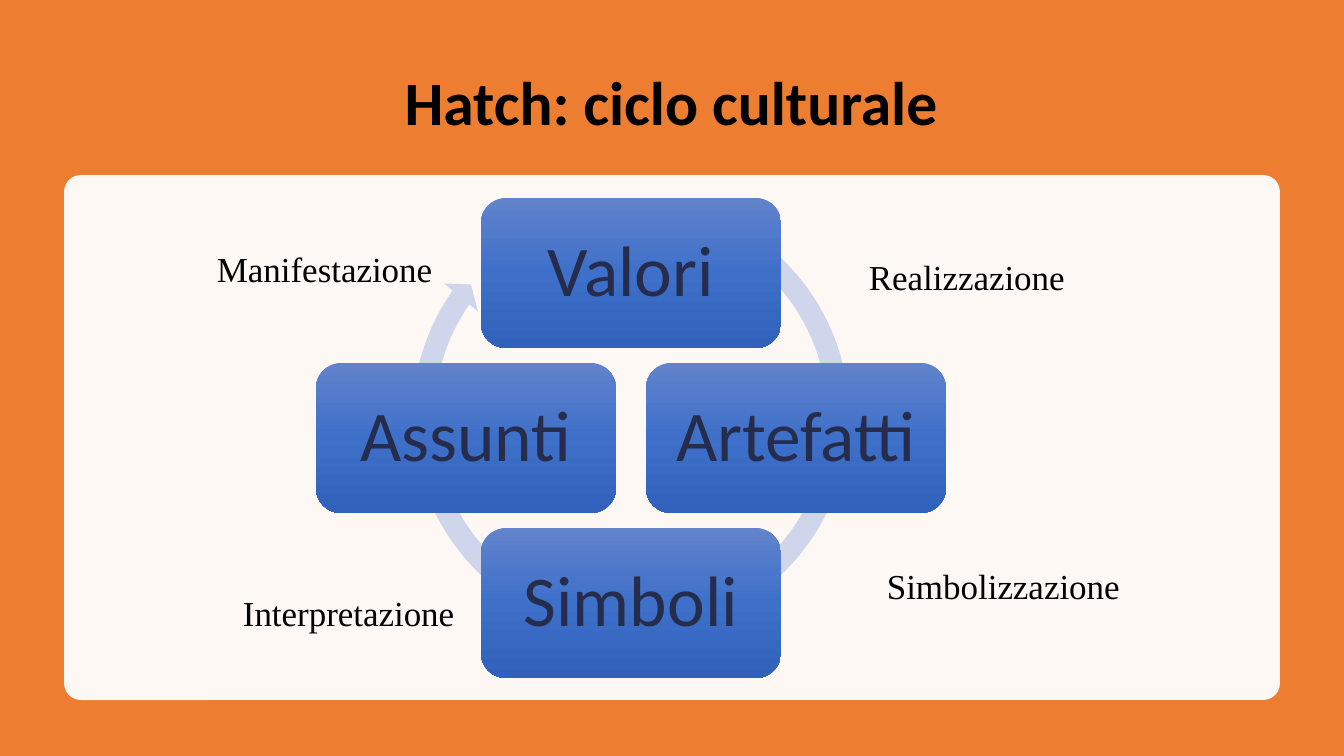
from copy import deepcopy

from lxml import etree
from pptx import Presentation
from pptx.dml.color import RGBColor
from pptx.enum.shapes import MSO_SHAPE
from pptx.enum.text import MSO_ANCHOR, MSO_AUTO_SIZE, PP_ALIGN
from pptx.oxml.ns import qn
from pptx.util import Pt

WIDE, HIGH = 1344, 756
SCALE = 12192000 / WIDE

RECT = MSO_SHAPE.RECTANGLE
ROUND = MSO_SHAPE.ROUNDED_RECTANGLE
ARROW = MSO_SHAPE.CIRCULAR_ARROW
MIDDLE, TOP = MSO_ANCHOR.MIDDLE, MSO_ANCHOR.TOP
CENTER, LEFT = PP_ALIGN.CENTER, PP_ALIGN.LEFT
GROW = MSO_AUTO_SIZE.SHAPE_TO_FIT_TEXT

ORANGE = RGBColor(0xED, 0x7D, 0x31)
WHITE = RGBColor(0xFF, 0xFF, 0xFF)
BLACK = RGBColor(0, 0, 0)
PALE = RGBColor(0xCF, 0xD5, 0xEA)
NAVY = RGBColor(0x26, 0x2D, 0x4C)
BLUES = [RGBColor(0x61, 0x83, 0xCB), RGBColor(0x3E, 0x70, 0xCA),
         RGBColor(0x30, 0x62, 0xBB)]

TITLE = {"name": "Calibri", "size": Pt(44), "bold": True}
NODE = {"name": "Calibri", "size": Pt(51)}
LABEL = {"name": "Times New Roman", "size": Pt(25)}

# Steps of the cycle: column and row, counted from its centre
STEPS = [("Valori", 0, -1), ("Artefatti", 1, 0),
         ("Simboli", 0, 1), ("Assunti", -1, 0)]
# Labels: text, then left, top, width inside the panel
LABELS = [("Realizzazione", 795, 76, 229), ("Simbolizzazione", 813, 385, 273),
          ("Interpretazione", 169, 412, 238), ("Manifestazione", 143, 68, 264)]


def px(num):
    return round(num * SCALE)


def add_form(slide, kind, box, color=None):
    form = slide.shapes.add_shape(kind, *map(px, box))
    form.shadow.inherit = False
    form.line.fill.background()
    if color is not None:
        form.fill.solid()
        form.fill.fore_color.rgb = color
    return form


def write(form, text, style, color, align=CENTER, anchor=MIDDLE, space=0.9):
    frame = form.text_frame
    frame.word_wrap = True
    frame.vertical_anchor = anchor
    para = frame.paragraphs[0]
    para.alignment = align
    para.line_spacing = space
    run = para.add_run()
    run.text = text
    for key, value in style.items():
        setattr(run.font, key, value)
    run.font.color.rgb = color
    return frame


def shade(form):
    """Fill the shape with the three blues from top to bottom."""
    fill = form.fill
    fill.gradient()
    fill.gradient_angle = 270
    first = next(form._element.iter(qn("a:gs")))
    first.addnext(deepcopy(first))
    for i, (stop, color) in enumerate(zip(fill.gradient_stops, BLUES)):
        stop.position = i / 2
        stop.color.rgb = color


def add_title(slide, box):
    form = slide.shapes.add_textbox(*map(px, box))
    write(form, "Hatch: ciclo culturale", TITLE, BLACK)


def add_panel(slide, box):
    form = add_form(slide, ROUND, box, WHITE)
    form.adjustments[0] = 0.032
    tone = next(form._element.iter(qn("a:srgbClr")))
    etree.SubElement(tone, qn("a:alpha"), val="95000")


def add_cycle(slide, box):
    left, top, wide, high = box
    mid_x, mid_y = left + wide / 2, top + high / 2
    node_w, node_h, step = 300, 150, 165
    ring = 459
    arrow = add_form(slide, ARROW, (mid_x - ring / 2, top - 11, ring, ring), PALE)
    for i, value in enumerate((0.047, 2.729, 128.992, 179.848, 0.048)):
        arrow.adjustments[i] = value
    for text, col, row in STEPS:
        node = add_form(slide, ROUND, (mid_x + col * step - node_w / 2,
                                       mid_y + row * step - node_h / 2,
                                       node_w, node_h))
        shade(node)
        frame = write(node, text, NODE, NAVY)
        frame.margin_left = frame.margin_right = px(20)


def add_labels(slide, box):
    for text, left, top, wide in LABELS:
        place = box[0] + left, box[1] + top, wide, 53
        form = slide.shapes.add_textbox(*map(px, place))
        frame = write(form, text, LABEL, BLACK, LEFT, TOP, 1.0)
        frame.auto_size = GROW
        frame.paragraphs[0].space_after = Pt(6)


def main():
    deck = Presentation()
    deck.slide_width, deck.slide_height = px(WIDE), px(HIGH)
    slide = deck.slides.add_slide(deck.slide_layouts[6])
    panel = 64, 175, 1216, 525
    add_form(slide, RECT, (0, 0, WIDE, HIGH), ORANGE)
    add_title(slide, (92, 50, 1159, 111))
    add_panel(slide, panel)
    add_cycle(slide, (316, 198, 630, 480))
    add_labels(slide, panel)
    deck.save("out.pptx")


if __name__ == "__main__":
    main()
